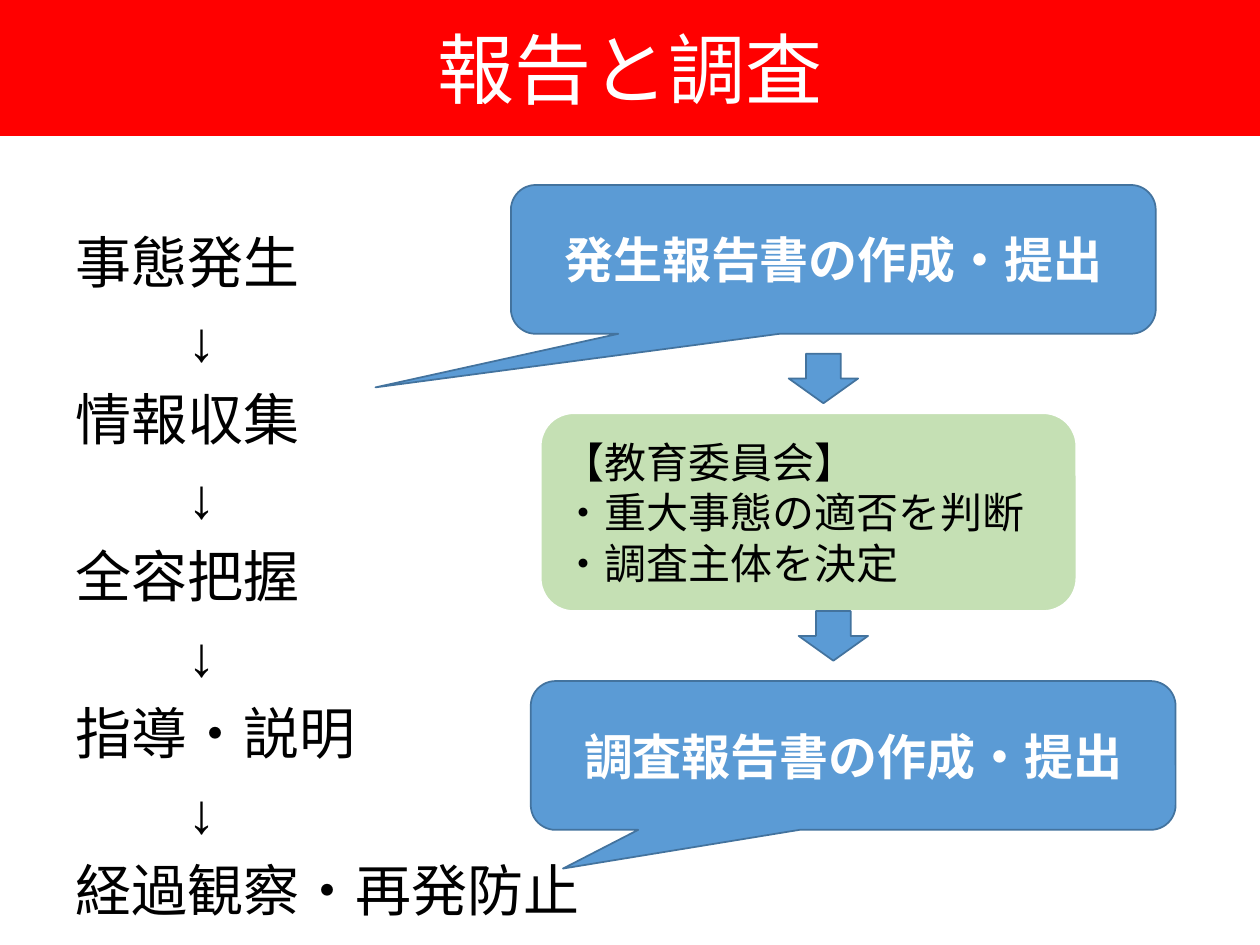
import pptx
import pptx.dml.color
import pptx.enum.shapes
import pptx.enum.text
import pptx.oxml
import pptx.oxml.ns
import pptx.util

Cm = pptx.util.Cm
Pt = pptx.util.Pt
RGBColor = pptx.dml.color.RGBColor
Shape = pptx.enum.shapes.MSO_SHAPE
Align = pptx.enum.text.PP_ALIGN
Anchor = pptx.enum.text.MSO_ANCHOR

RED = RGBColor(0xFF, 0x00, 0x00)
WHITE = RGBColor(0xFF, 0xFF, 0xFF)
BLACK = RGBColor(0x00, 0x00, 0x00)
BLUE = RGBColor(0x5B, 0x9B, 0xD5)
DARK_BLUE = RGBColor(0x43, 0x73, 0x9E)
GREEN = RGBColor(0xC5, 0xE0, 0xB4)

STEPS = ["事態発生", "情報収集", "全容把握", "指導・説明", "経過観察・再発防止"]


class SlideBuilder:
    heading_font = "Arial"
    box_font = "Noto Sans CJK JP"

    def __init__(self, presentation):
        self.slide = presentation.slides.add_slide(presentation.slide_layouts[1])

    def place(self, shape, left, top, width, height):
        box = {"left": left, "top": top, "width": width, "height": height}
        for name, value in box.items():
            setattr(shape, name, Cm(value))

    def add_text(self, paragraph, text, font, size, color, bold=False, **layout):
        run = paragraph.add_run()
        run.text = text
        for name, value in {"name": font, "size": Pt(size), "bold": bold}.items():
            setattr(run.font, name, value)
        run.font.color.rgb = color
        east_asian = pptx.oxml.parse_xml(
            f'<a:ea {pptx.oxml.ns.nsdecls("a")} typeface="{font}"/>')
        run._r.get_or_add_rPr().append(east_asian)
        for name, value in layout.items():
            setattr(paragraph, name, value)

    def fill_frame(self, frame, lines, **style):
        """Add one paragraph for each line of text."""
        for index, line in enumerate(lines):
            paragraph = frame.add_paragraph() if index else frame.paragraphs[0]
            self.add_text(paragraph, line, **style)

    def title(self, text, *box):
        shape = self.slide.shapes.title
        self.place(shape, *box)
        shape.fill.solid()
        shape.fill.fore_color.rgb = RED
        shape.text_frame.vertical_anchor = Anchor.MIDDLE
        self.add_text(shape.text_frame.paragraphs[0], text, self.heading_font, 44,
                      WHITE, alignment=Align.CENTER)

    def flow(self, steps, *box):
        """List the steps with an indented arrow between neighbours."""
        shape = self.slide.placeholders[1]
        self.place(shape, *box)
        frame = shape.text_frame
        frame.auto_size = pptx.enum.text.MSO_AUTO_SIZE.NONE
        lines = "\n↓\n".join(steps).split("\n")
        self.fill_frame(frame, lines, font=self.heading_font, size=32, color=BLACK,
                        line_spacing=Pt(38.5), space_before=Pt(6.4))
        for paragraph in frame.paragraphs:
            is_arrow = paragraph.text == "↓"
            properties = paragraph._p.get_or_add_pPr()
            properties.set("marL", str(Cm(2.26 if is_arrow else 1.27)))
            properties.set("indent", str(Cm(0 if is_arrow else -1.27)))
            properties.append(pptx.oxml.parse_xml(
                f'<a:buNone {pptx.oxml.ns.nsdecls("a")}/>'))

    def shape(self, kind, box, fill, line):
        shape = self.slide.shapes.add_shape(kind, *map(Cm, box))
        shape.shadow.inherit = False
        shape.fill.solid()
        shape.fill.fore_color.rgb = fill
        shape.line.color.rgb = line
        shape.line.width = Pt(1)
        shape.text_frame.word_wrap = True
        shape.text_frame.vertical_anchor = Anchor.MIDDLE
        return shape

    def callout(self, text, left, top, tip):
        shape = self.shape(Shape.ROUNDED_RECTANGULAR_CALLOUT,
                           (left, top, 13, 3), BLUE, DARK_BLUE)
        for index, value in enumerate(tip):
            shape.adjustments[index] = value
        self.fill_frame(shape.text_frame, [text], font=self.box_font, size=28,
                        color=WHITE, bold=True, alignment=Align.CENTER)

    def panel(self, lines, *box):
        shape = self.shape(Shape.ROUNDED_RECTANGLE, box, GREEN, WHITE)
        self.fill_frame(shape.text_frame, lines, font=self.box_font, size=24,
                        color=BLACK, alignment=Align.LEFT)

    def down_arrow(self, left, top):
        self.shape(Shape.DOWN_ARROW, (left, top, 1.4, 1), BLUE, DARK_BLUE)


def main():
    presentation = pptx.Presentation()
    presentation.slide_width = Cm(25.4)
    presentation.slide_height = Cm(19.05)

    builder = SlideBuilder(presentation)
    builder.title("報告と調査", 0, 0, 25.4, 2.74)
    builder.flow(STEPS, 1.27, 4.45, 22.86, 13.87)
    builder.callout("発生報告書の作成・提出", 10.3, 3.73, (-0.71, 0.86))
    builder.callout("調査報告書の作成・提出", 10.7, 13.73, (-0.45, 0.76))
    builder.panel(["【教育委員会】", "・重大事態の適否を判断", "・調査主体を決定"],
                  10.9, 8.33, 10.8, 3.99)
    builder.down_arrow(15.9, 7.13)
    builder.down_arrow(16.1, 12.32)
    presentation.save("out.pptx")


if __name__ == "__main__":
    main()
